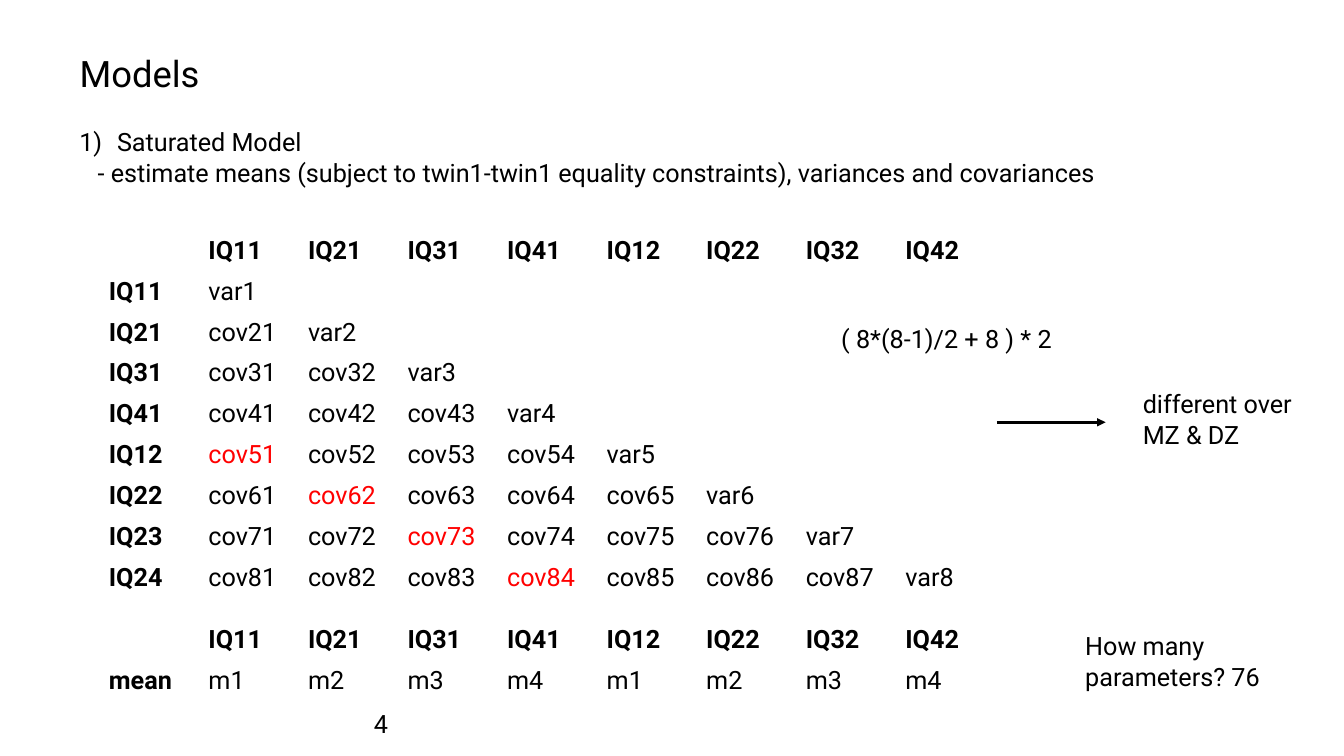
from lxml import etree
from pptx import Presentation
from pptx.dml.color import RGBColor
from pptx.enum.shapes import MSO_CONNECTOR
from pptx.enum.text import MSO_ANCHOR, MSO_AUTO_SIZE, PP_ALIGN
from pptx.oxml import parse_xml
from pptx.oxml.ns import nsdecls, qn
from pptx.util import Cm, Pt

STRAIGHT = MSO_CONNECTOR.STRAIGHT
TOP = MSO_ANCHOR.TOP
LEFT = PP_ALIGN.LEFT
NO_AUTOFIT = MSO_AUTO_SIZE.NONE
FIT_SHAPE = MSO_AUTO_SIZE.SHAPE_TO_FIT_TEXT

COLORS = {"text": "000000", "cross_twin": "FF0000", "border": "FFFFFF"}
FONT = "Roboto"
TITLE_SIZE, BODY_SIZE = 26, 18
COLUMN_WIDTH, ROW_HEIGHT = 2.51, 1.03

MEASURES = [f"IQ{test}{twin}" for twin in (1, 2) for test in (1, 2, 3, 4)]
ROW_LABELS = MEASURES[:6] + ["IQ23", "IQ24"]
TESTS_PER_TWIN = 4


def style(paragraph, size=BODY_SIZE, bold=False, color="text"):
    paragraph.alignment = LEFT
    font = paragraph.font
    font.name, font.size, font.bold = FONT, Pt(size), bold
    font.color.rgb = RGBColor.from_string(COLORS[color])


def add_title(slide, left, top, width, height):
    title = slide.shapes.title
    title.left, title.top, title.width, title.height = map(Cm, (left, top, width, height))
    frame = title.text_frame
    frame.text = "Models"
    frame.vertical_anchor, frame.auto_size = TOP, NO_AUTOFIT
    style(frame.paragraphs[0], TITLE_SIZE)


def add_text(slide, left, top, width, height, *lines):
    """Add a wrapping text box with one paragraph per line; return its paragraphs."""
    frame = slide.shapes.add_textbox(*map(Cm, (left, top, width, height))).text_frame
    frame.text = "\n".join(lines)
    frame.word_wrap, frame.auto_size = True, FIT_SHAPE
    for paragraph in frame.paragraphs:
        style(paragraph)
    return frame.paragraphs


def add_model_description(slide, left, top, width, height):
    heading, detail = add_text(
        slide, left, top, width, height,
        "Saturated Model",
        "- estimate means (subject to twin1-twin1 equality constraints), "
        "variances and covariances")
    numbered = heading._p.get_or_add_pPr()
    numbered.set("marL", str(Cm(0.95)))
    numbered.set("indent", str(-Cm(0.95)))
    etree.SubElement(numbered, qn("a:buAutoNum"), type="arabicParenR")
    detail._p.get_or_add_pPr().set("marL", str(Cm(0.46)))


def set_borders(cell, bottom_width):
    properties = cell._tc.get_or_add_tcPr()
    for side, width in (("L", 1), ("R", 1), ("T", 1), ("B", bottom_width)):
        properties.append(parse_xml(
            f'<a:ln{side} {nsdecls("a")} w="{Pt(width)}"><a:solidFill>'
            f'<a:srgbClr val="{COLORS["border"]}"/></a:solidFill></a:ln{side}>'))


def add_matrix(slide, left, top, rows, highlighted=()):
    """Add a table with bold first row and column; highlighted holds cell texts."""
    column_count = len(rows[0])
    table = slide.shapes.add_table(
        len(rows), column_count, Cm(left), Cm(top),
        Cm(COLUMN_WIDTH * column_count), Cm(ROW_HEIGHT * len(rows))).table
    table.horz_banding = False
    for row_index, values in enumerate(rows):
        for column_index, value in enumerate(values):
            cell = table.cell(row_index, column_index)
            cell.text = value
            set_borders(cell, 3 if row_index == 0 else 1)
            cell.fill.background()
            style(cell.text_frame.paragraphs[0],
                  bold=row_index == 0 or column_index == 0,
                  color="cross_twin" if value in highlighted else "text")


def covariance_rows():
    """Return the lower triangle with its header row and row labels."""
    rows = [[""] + MEASURES]
    for row, label in enumerate(ROW_LABELS, start=1):
        covariances = [f"cov{row}{column}" for column in range(1, row)]
        blanks = [""] * (len(MEASURES) - row)
        rows.append([label] + covariances + [f"var{row}"] + blanks)
    return rows


def mean_rows():
    tests = range(1, TESTS_PER_TWIN + 1)
    return [[""] + MEASURES, ["mean"] + [f"m{test}" for test in tests] * 2]


def add_arrow(slide, left, top, length):
    arrow = slide.shapes.add_connector(
        STRAIGHT, Cm(left), Cm(top), Cm(left + length), Cm(top))
    arrow.line.width = Pt(2)
    arrow.line.color.rgb = RGBColor.from_string(COLORS["text"])
    etree.SubElement(arrow.line._get_or_add_ln(), qn("a:tailEnd"), type="triangle")
    etree.SubElement(arrow._element.spPr, qn("a:effectLst"))


def add_notes_beside_matrix(slide, left, top):
    """Place the parameter count and the remark on zygosity around the arrow."""
    add_arrow(slide, left, top, 2.74)
    add_text(slide, left + 3.43, top - 0.97, 5.74, 1.8, "different over", "MZ & DZ")
    add_text(slide, left - 4.17, top - 2.62, 6.88, 1.02, "( 8*(8-1)/2 + 8 ) * 2")
    add_text(slide, left + 1.98, top + 5.13, 6.32, 1.8, "How many parameters? 76")


def main():
    presentation = Presentation()
    presentation.slide_width, presentation.slide_height = Cm(33.87), Cm(19.05)
    title_only = presentation.slide_layouts[5]
    slide = presentation.slides.add_slide(title_only)

    add_title(slide, 1.75, 1.17, 30.58, 1.4)
    add_model_description(slide, 1.75, 3.07, 30.58, 1.8)
    cross_twin = [f"cov{test + TESTS_PER_TWIN}{test}"
                  for test in range(1, TESTS_PER_TWIN + 1)]
    add_matrix(slide, 2.49, 5.82, covariance_rows(), cross_twin)
    add_matrix(slide, 2.49, 15.62, mean_rows())
    add_notes_beside_matrix(slide, 25.12, 10.64)
    add_text(slide, 9.17, 17.73, 1.78, 1.02, "4")

    presentation.save("out.pptx")


if __name__ == "__main__":
    main()
